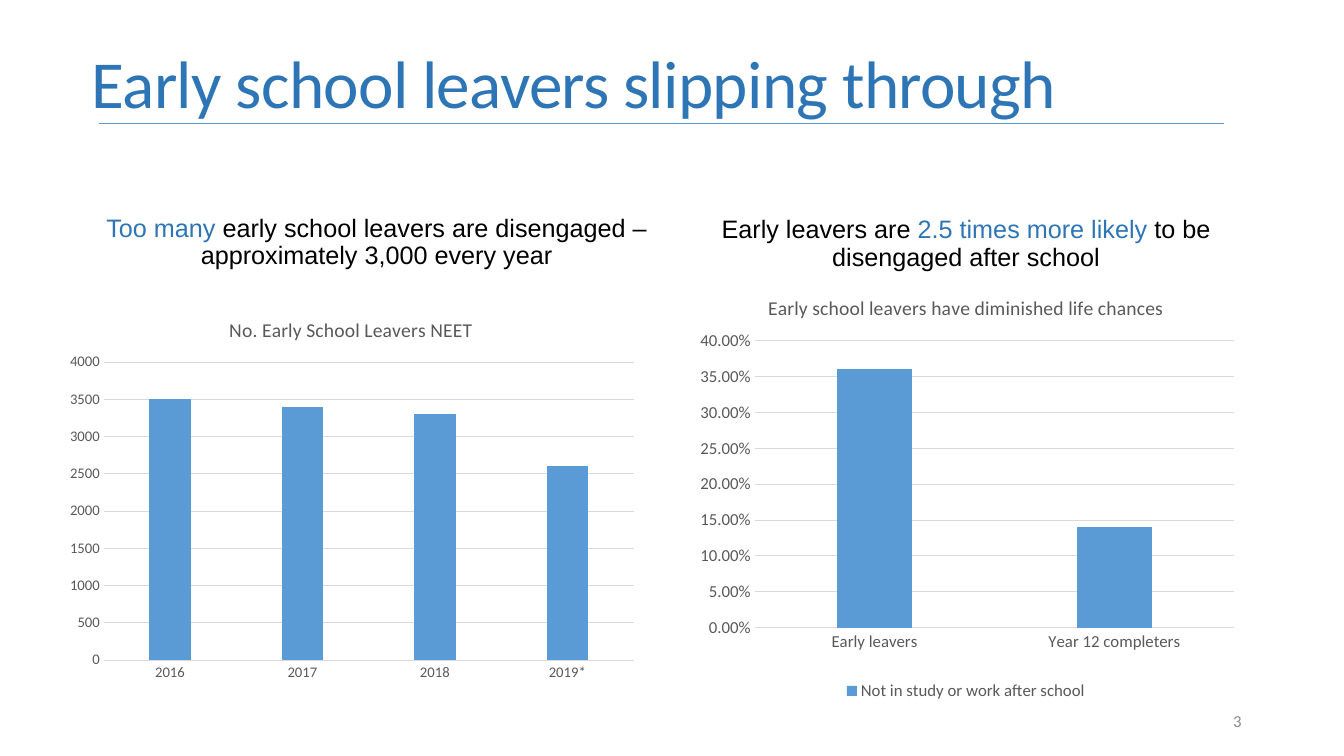
from dataclasses import dataclass

from lxml import etree
from pptx import Presentation
from pptx.chart.data import CategoryChartData
from pptx.dml.color import RGBColor
from pptx.enum.chart import XL_CHART_TYPE as ChartType
from pptx.enum.chart import XL_LEGEND_POSITION as LegendPosition
from pptx.enum.chart import XL_TICK_MARK as TickMark
from pptx.enum.shapes import MSO_CONNECTOR as Connector
from pptx.enum.text import MSO_ANCHOR as Anchor
from pptx.enum.text import PP_ALIGN as Align
from pptx.oxml import parse_xml
from pptx.oxml.ns import nsdecls, qn
from pptx.util import Pt


@dataclass(frozen=True)
class Theme:
    accent: RGBColor = RGBColor(0x2E, 0x75, 0xB6)
    bar: RGBColor = RGBColor(0x5B, 0x9B, 0xD5)
    ink: RGBColor = RGBColor(0, 0, 0)
    label: RGBColor = RGBColor(0x59, 0x59, 0x59)
    grid: RGBColor = RGBColor(0xD9, 0xD9, 0xD9)
    page: RGBColor = RGBColor(0x8C, 0x8C, 0x8C)
    heading_font: str = "Calibri"
    body_font: str = "Arial"
    title_size: float = 48
    body_size: float = 18
    chart_title_size: float = 14
    small_size: float = 12


class SlideBuilder:
    def __init__(self, slide, theme):
        self.shapes = slide.shapes
        self.theme = theme

    def style(self, font, size, color, name=None):
        font.size = Pt(size)
        font.color.rgb = color
        font.name = name or self.theme.heading_font

    def text(self, box, anchor, align=Align.LEFT):
        """Add an empty text box and return its frame and first paragraph."""
        frame = self.shapes.add_textbox(*map(Pt, box)).text_frame
        frame.word_wrap = True
        frame.vertical_anchor = anchor
        paragraph = frame.paragraphs[0]
        paragraph.alignment = align
        return frame, paragraph

    def title(self, box, wording):
        frame, heading = self.text(box, Anchor.MIDDLE)
        frame.margin_bottom = Pt(56)
        heading.line_spacing = 0.9
        self.style(heading.font, self.theme.title_size, self.theme.accent)
        run = heading.add_run()
        run.text = wording
        run._r.get_or_add_rPr().set("spc", "-50")

    def statement(self, box, *parts):
        """Add a centred statement from (wording, colour) parts."""
        _, statement = self.text(box, Anchor.BOTTOM, Align.CENTER)
        statement.line_spacing = 0.9
        statement.space_before = Pt(10)
        statement.font.size = Pt(self.theme.body_size)
        statement.font.name = self.theme.body_font
        for wording, color in parts:
            run = statement.add_run()
            run.text = wording
            run.font.color.rgb = color

    def page_number(self, box, number):
        _, page = self.text(box, Anchor.MIDDLE, Align.RIGHT)
        page.text = str(number)
        self.style(page.font, self.theme.small_size, self.theme.page)

    def rule(self, left, right, y):
        rule = self.shapes.add_connector(
            Connector.STRAIGHT, Pt(left), Pt(y), Pt(right), Pt(y))
        rule.line.color.rgb = self.theme.bar
        rule.line.width = Pt(0.5)
        etree.SubElement(rule._element.spPr, qn("a:effectLst"))

    def column_chart(self, box, title, series_name, values, plot_area, top, step,
                     number_format="General", axis_size=12, legend=False):
        """Add a chart; plot_area is x, y, w, h as shares of the chart."""
        theme = self.theme
        data = CategoryChartData()
        data.categories = list(values)
        data.add_series(series_name, list(values.values()))
        chart = self.shapes.add_chart(
            ChartType.COLUMN_CLUSTERED, *map(Pt, box), data).chart
        self.style(chart.font, 10, theme.ink)

        chart.has_title = True
        heading = chart.chart_title.text_frame.paragraphs[0]
        heading.text = title
        self.style(heading.font, theme.chart_title_size, theme.label)
        heading.font.bold = False
        chart.chart_title.include_in_layout = False

        for axis in (chart.category_axis, chart.value_axis):
            axis.major_tick_mark = axis.minor_tick_mark = TickMark.NONE
            self.style(axis.tick_labels.font, axis_size, theme.label)
        scale = chart.value_axis
        scale.minimum_scale, scale.maximum_scale, scale.major_unit = 0, top, step
        scale.tick_labels.number_format = number_format
        scale.tick_labels.number_format_is_linked = False
        scale.format.line.fill.background()
        for line in (chart.category_axis.format.line,
                     scale.major_gridlines.format.line):
            line.color.rgb = theme.grid
            line.width = Pt(0.75)

        columns = chart.plots[0]
        columns.vary_by_categories = False
        columns.gap_width = 219
        columns.overlap = -27
        fill = columns.series[0].format.fill
        fill.solid()
        fill.fore_color.rgb = theme.bar

        chart.has_legend = legend
        if legend:
            chart.legend.position = LegendPosition.BOTTOM
            chart.legend.include_in_layout = False
            self.style(chart.legend.font, theme.small_size, theme.label)
        self.place_plot(chart, plot_area)

    def place_plot(self, chart, plot_area):
        plot = chart._chartSpace.chart.plotArea
        for automatic in plot.findall(qn("c:layout")):
            plot.remove(automatic)
        modes = '<c:layoutTarget val="inner"/><c:xMode val="edge"/><c:yMode val="edge"/>'
        shares = "".join(f'<c:{key} val="{share}"/>'
                         for key, share in zip("xywh", plot_area))
        plot.insert(0, parse_xml(
            f'<c:layout {nsdecls("c")}><c:manualLayout>{modes}{shares}'
            '</c:manualLayout></c:layout>'))


def main():
    deck = Presentation()
    deck.slide_width, deck.slide_height = Pt(960), Pt(540)
    theme = Theme()
    page = SlideBuilder(deck.slides.add_slide(deck.slide_layouts[6]), theme)

    page.title((58.5, 39.5, 828, 97), "Early school leavers slipping through")
    page.statement(
        (66, 117.5, 406, 79),
        ("Too many ", theme.accent),
        ("early school leavers are disengaged – approximately 3,000 every year",
         theme.ink))
    page.statement(
        (486, 132.5, 408, 65),
        ("Early leavers are ", theme.ink),
        ("2.5 times more likely ", theme.accent),
        ("to be disengaged after school", theme.ink))
    page.column_chart(
        (486, 197.5, 408, 306), "Early school leavers have diminished life chances",
        "Not in study or work after school",
        {"Early leavers": 0.36, "Year 12 completers": 0.14},
        plot_area=(0.13, 0.15, 0.84, 0.67), top=0.4, step=0.05,
        number_format="0.00%", legend=True)
    page.rule(70.5, 874, 88)
    page.column_chart(
        (40.5, 214, 420.5, 280), "No. Early School Leavers NEET", "Series 1",
        {"2016": 3500, "2017": 3400, "2018": 3300, "2019*": 2600},
        plot_area=(0.08, 0.16, 0.9, 0.76), top=4000, step=500, axis_size=10.5)
    page.page_number((678, 500.5, 216, 29), 3)

    deck.save("out.pptx")


if __name__ == "__main__":
    main()
